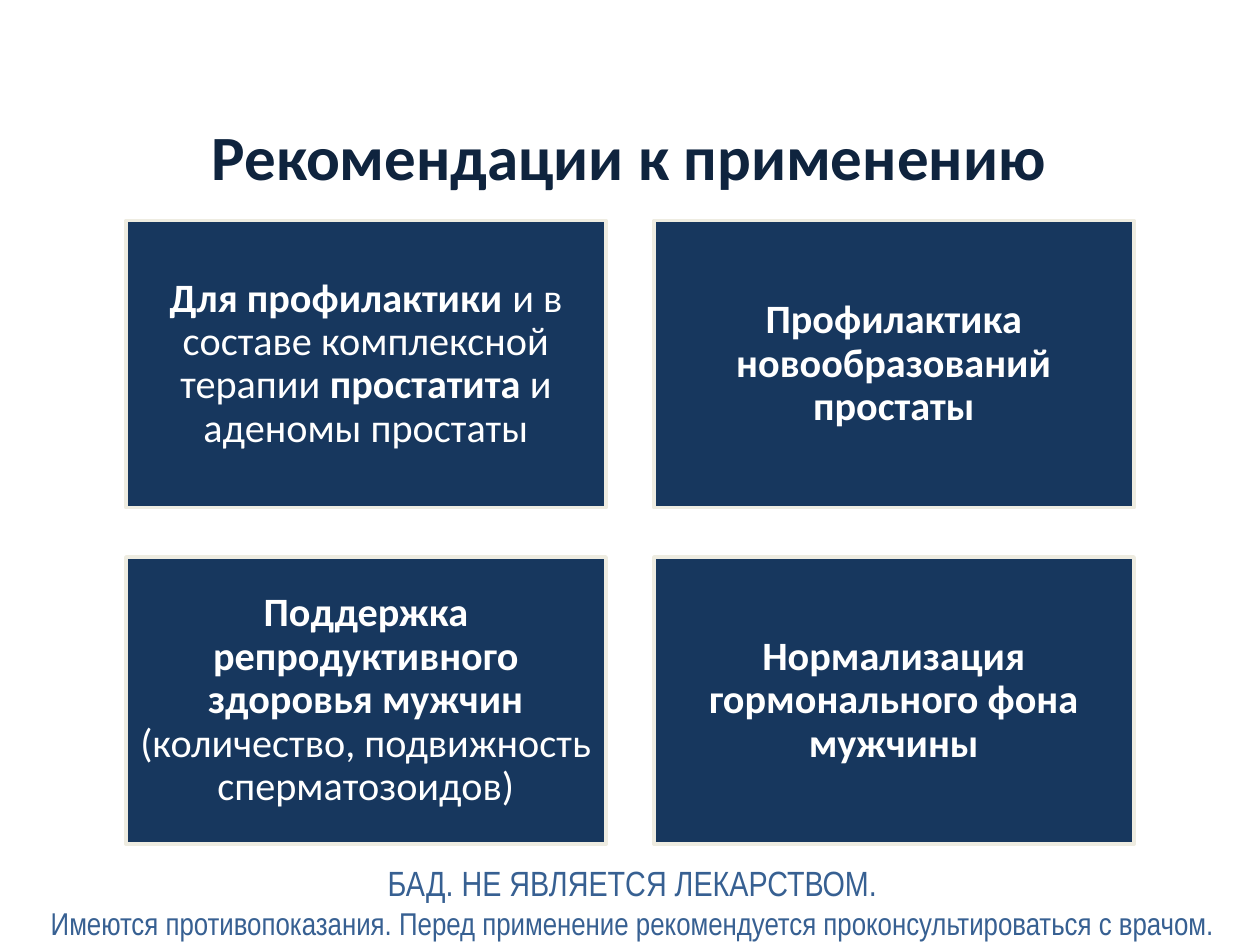
"""Build the slide with recommendations for use."""
from dataclasses import dataclass

from pptx import Presentation
from pptx.dml.color import RGBColor
from pptx.enum.shapes import MSO_SHAPE as Shape
from pptx.enum.text import MSO_ANCHOR as Anchor, PP_ALIGN as Align
from pptx.util import Inches, Pt


@dataclass(frozen=True)
class Theme:
    """Colours, fonts and type sizes of the slide."""
    title: str = "0F243E"
    card: str = "17375E"
    border: str = "EEECE1"
    card_text: str = "FFFFFF"
    note: str = "376092"
    font: str = "Calibri"
    note_font: str = "Arial Narrow"
    title_size: int = 36
    card_size: int = 23
    note_sizes: tuple[int, int] = (20, 18)


@dataclass(frozen=True)
class Run:
    """A piece of text with one weight."""
    text: str
    bold: bool = True


@dataclass(frozen=True)
class Card:
    """A recommendation and its cell in the grid."""
    row: int
    col: int
    runs: tuple[Run, ...]


THEME = Theme()
LEFT, TOP, WIDTH, HEIGHT = 1, 1.75, 3.81, 2.28
STEP_X, STEP_Y = 4.19, 2.67

CARDS = (
    Card(0, 0, (Run("Для профилактики "),
                Run("и в составе комплексной терапии ", False),
                Run("простатита"),
                Run(" и аденомы простаты", False))),
    Card(0, 1, (Run("Профилактика новообразований простаты"),)),
    Card(1, 0, (Run("Поддержка репродуктивного здоровья мужчин "),
                Run("(количество, подвижность сперматозоидов)", False))),
    Card(1, 1, (Run("Нормализация гормонального фона мужчины"),)),
)
NOTES = (
    "БАД. НЕ ЯВЛЯЕТСЯ ЛЕКАРСТВОМ.",
    "Имеются противопоказания. Перед применение рекомендуется "
    "проконсультироваться с врачом.",
)


def set_attrs(obj, values: dict) -> None:
    """Set every attribute named in values."""
    for name, value in values.items():
        setattr(obj, name, value)


def add_run(p, text: str, size: int, font: str, color: str, bold: bool) -> None:
    """Append a formatted run to a centred paragraph."""
    p.alignment = Align.CENTER
    r = p.add_run()
    r.text = text
    set_attrs(r.font, {"size": Pt(size), "name": font, "bold": bold})
    r.font.color.rgb = RGBColor.from_string(color)


def draw_title(s, text: str) -> None:
    """Place and fill the title placeholder."""
    sp = s.shapes.title
    set_attrs(sp, {"left": Inches(0.49), "top": Inches(0.68),
                   "width": Inches(9), "height": Inches(1.1)})
    tf = sp.text_frame
    tf.vertical_anchor = Anchor.MIDDLE
    add_run(tf.paragraphs[0], text, THEME.title_size, THEME.font, THEME.title, True)


def draw_card(s, card: Card) -> None:
    """Draw one filled rectangle with its text."""
    sp = s.shapes.add_shape(
        Shape.RECTANGLE, Inches(LEFT + card.col * STEP_X),
        Inches(TOP + card.row * STEP_Y), Inches(WIDTH), Inches(HEIGHT))
    sp.shadow.inherit = False
    sp.fill.solid()
    sp.fill.fore_color.rgb = RGBColor.from_string(THEME.card)
    sp.line.color.rgb = RGBColor.from_string(THEME.border)
    sp.line.width = Pt(2)
    tf = sp.text_frame
    sides = ("left", "top", "right", "bottom")
    set_attrs(tf, {f"margin_{side}": Inches(0.1) for side in sides})
    set_attrs(tf, {"word_wrap": True, "vertical_anchor": Anchor.MIDDLE})
    p = tf.paragraphs[0]
    p.line_spacing = 0.9
    for run in card.runs:
        add_run(p, run.text, THEME.card_size, THEME.font, THEME.card_text, run.bold)


def draw_notes(s, notes: tuple[str, ...]) -> None:
    """Write the disclaimer lines at the foot of the slide."""
    tf = s.shapes.add_textbox(
        Inches(0.04), Inches(6.79), Inches(9.96), Inches(0.74)).text_frame
    tf.word_wrap = True
    for i, (text, size) in enumerate(zip(notes, THEME.note_sizes)):
        p = tf.add_paragraph() if i else tf.paragraphs[0]
        add_run(p, text, size, THEME.note_font, THEME.note, False)


def main() -> None:
    """Build and save the presentation."""
    prs = Presentation()
    set_attrs(prs, {"slide_width": Inches(10), "slide_height": Inches(7.5)})
    s = prs.slides.add_slide(prs.slide_layouts[5])
    draw_title(s, "Рекомендации к применению")
    for card in CARDS:
        draw_card(s, card)
    draw_notes(s, NOTES)
    prs.save("out.pptx")


if __name__ == "__main__":
    main()
